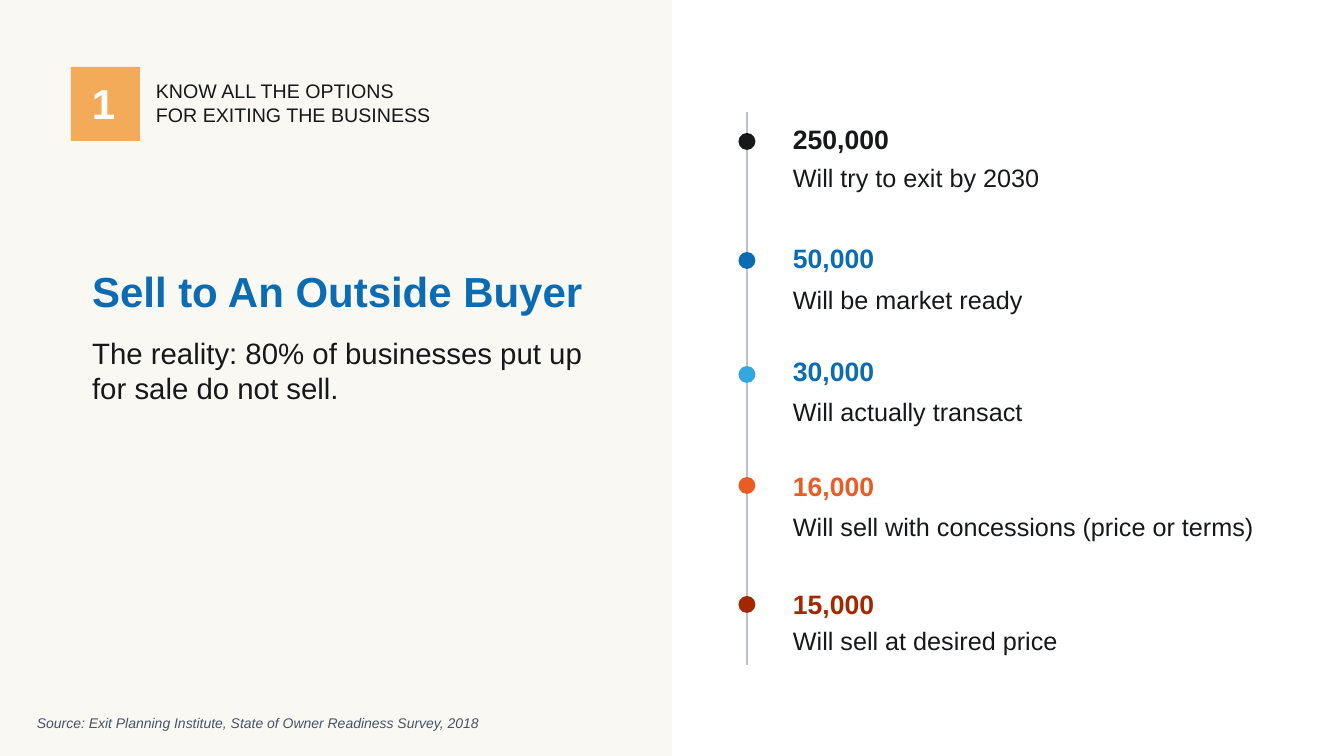
"""Build the slide on selling a business to an outside buyer."""
from dataclasses import dataclass

from lxml import etree
from pptx import Presentation
from pptx.dml.color import RGBColor
from pptx.enum.shapes import MSO_CONNECTOR, MSO_SHAPE
from pptx.enum.text import MSO_ANCHOR, MSO_AUTO_SIZE, PP_ALIGN
from pptx.oxml.ns import qn
from pptx.util import Pt

RECTANGLE, OVAL = MSO_SHAPE.RECTANGLE, MSO_SHAPE.OVAL
STRAIGHT = MSO_CONNECTOR.STRAIGHT
TOP, LEFT = MSO_ANCHOR.TOP, PP_ALIGN.LEFT
NO_AUTOFIT = MSO_AUTO_SIZE.NONE


@dataclass(frozen=True)
class Theme:
    """Colours, font and type sizes of the slide."""
    font: str = "Arial"
    paper: str = "F9F8F3"
    white: str = "FFFFFF"
    ink: str = "161819"
    blue: str = "0C6CB3"
    sky: str = "33A7DF"
    orange: str = "E95C24"
    rust: str = "A22800"
    badge: str = "F3AB59"
    rule: str = "BAC1CB"
    slate: str = "44546A"
    title_size: int = 30
    body_size: int = 21
    value_size: int = 19
    label_size: int = 18
    header_size: int = 14
    source_size: int = 10
    rule_width: float = 1.25


THEME = Theme()

TITLE = "Sell to An Outside Buyer"
BODY = "The reality: 80% of businesses put up for sale do not sell."
NUMBER = "1"
HEADER = ["KNOW ALL THE OPTIONS", "FOR EXITING THE BUSINESS"]
SOURCE = "Source: Exit Planning Institute, State of Owner Readiness Survey, 2018"

# value, label, value colour, dot colour, value top, label top, dot top
MILESTONES = [
    ("250,000", "Will try to exit by 2030", THEME.ink, THEME.ink, 118, 157, 133),
    ("50,000", "Will be market ready", THEME.blue, THEME.blue, 237, 279, 252),
    ("30,000", "Will actually transact", THEME.blue, THEME.sky, 350, 391, 366),
    ("16,000", "Will sell with concessions (price or terms)",
     THEME.orange, THEME.orange, 465, 506, 477),
    ("15,000", "Will sell at desired price", THEME.rust, THEME.rust, 583, 620, 596),
]

SLIDE_WIDTH, SLIDE_HEIGHT = 1344, 756
TIMELINE_X, TIMELINE_TOP, TIMELINE_BOTTOM = 747, 112, 665
DOT_SIZE = 17
TEXT_X, TEXT_WIDTH = 783, 535
VALUE_HEIGHT, LABEL_HEIGHT = 42, 40


def px(length):
    """Turn pixels into EMU."""
    return round(length * 914400 / 100.8)


def write(shape, lines, size, color, bold=False, italic=False):
    """Fill a text shape with one paragraph of one or more lines."""
    frame = shape.text_frame
    frame.word_wrap = True
    frame.auto_size = NO_AUTOFIT
    frame.vertical_anchor = TOP
    paragraph = frame.paragraphs[0]
    paragraph.alignment = LEFT
    paragraph.space_before = Pt(0)
    for index, line in enumerate(lines):
        if index:
            paragraph.add_line_break()
        run = paragraph.add_run()
        run.text = line
        run.font.name = THEME.font
        run.font.size = Pt(size)
        run.font.bold = bold
        run.font.italic = italic
        run.font.color.rgb = RGBColor.from_string(color)
    return paragraph


def add_text(slide, box, lines, size, color, **style):
    """Add a text box at a pixel box."""
    write(slide.shapes.add_textbox(*map(px, box)), lines, size, color, **style)


def fill_placeholder(placeholder, box, lines, size, color, **style):
    """Move a placeholder to a pixel box and write into it."""
    placeholder.left, placeholder.top, placeholder.width, placeholder.height = map(px, box)
    return write(placeholder, lines, size, color, **style)


def add_block(slide, kind, box, color):
    """Add a plain filled shape without an outline."""
    shape = slide.shapes.add_shape(kind, *map(px, box))
    shape.shadow.inherit = False
    shape.fill.solid()
    shape.fill.fore_color.rgb = RGBColor.from_string(color)
    shape.line.fill.background()


def add_headline(slide):
    """Write the title and the body without a bullet."""
    fill_placeholder(slide.shapes.title, (82, 260, 544, 62), [TITLE],
                     THEME.title_size, THEME.blue, bold=True)
    paragraph = fill_placeholder(slide.placeholders[1], (82, 330, TEXT_WIDTH, 82), [BODY],
                                 THEME.body_size, THEME.ink)
    properties = paragraph._p.get_or_add_pPr()
    properties.set("marL", "0")
    properties.set("indent", "0")
    etree.SubElement(properties, qn("a:buNone"))


def add_timeline(slide):
    """Draw the vertical line with its dots, values and labels."""
    line = slide.shapes.add_connector(
        STRAIGHT, px(TIMELINE_X), px(TIMELINE_TOP), px(TIMELINE_X), px(TIMELINE_BOTTOM))
    line.line.color.rgb = RGBColor.from_string(THEME.rule)
    line.line.width = Pt(THEME.rule_width)
    etree.SubElement(line._element.spPr, qn("a:effectLst"))
    for value, label, value_color, dot_color, value_top, label_top, dot_top in MILESTONES:
        add_block(slide, OVAL, (TIMELINE_X - DOT_SIZE / 2, dot_top, DOT_SIZE, DOT_SIZE),
                  dot_color)
        add_text(slide, (TEXT_X, value_top, TEXT_WIDTH, VALUE_HEIGHT), [value],
                 THEME.value_size, value_color, bold=True)
        add_text(slide, (TEXT_X, label_top, TEXT_WIDTH, LABEL_HEIGHT), [label],
                 THEME.label_size, THEME.ink)


def main():
    """Build and save the presentation."""
    presentation = Presentation()
    presentation.slide_width, presentation.slide_height = px(SLIDE_WIDTH), px(SLIDE_HEIGHT)
    slide = presentation.slides.add_slide(presentation.slide_layouts[1])
    slide.background.fill.solid()
    slide.background.fill.fore_color.rgb = RGBColor.from_string(THEME.paper)

    half = SLIDE_WIDTH // 2
    add_block(slide, RECTANGLE, (half, 0, half, SLIDE_HEIGHT), THEME.white)
    add_headline(slide)
    add_timeline(slide)
    add_block(slide, RECTANGLE, (71, 67, 69, 74), THEME.badge)
    add_text(slide, (82, 73, 67, 61), [NUMBER], THEME.title_size, THEME.white, bold=True)
    add_text(slide, (146, 74, 354, 57), HEADER, THEME.header_size, THEME.ink)
    add_text(slide, (27, 710, 716, 27), [SOURCE], THEME.source_size, THEME.slate, italic=True)
    presentation.save("out.pptx")


if __name__ == "__main__":
    main()
